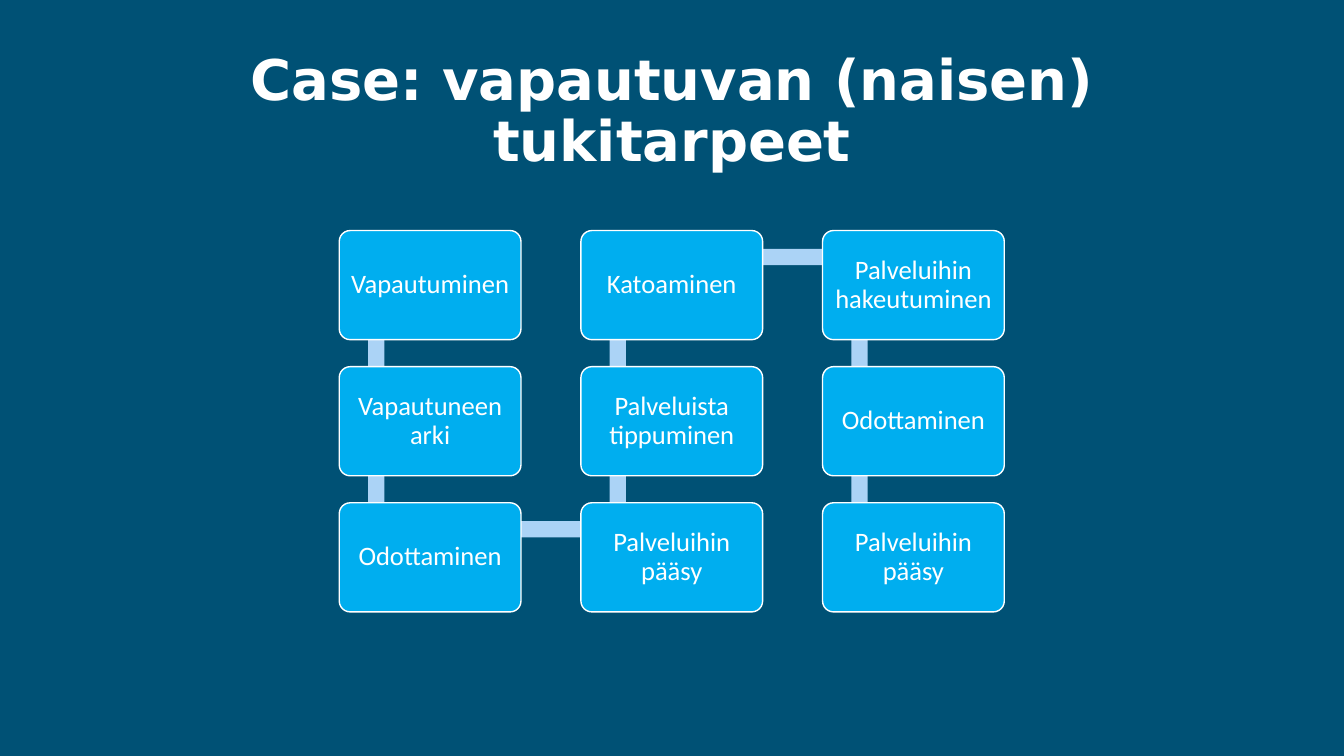
from dataclasses import dataclass
from math import atan2, degrees, hypot

from pptx import Presentation
from pptx.dml.color import RGBColor
from pptx.enum.shapes import MSO_SHAPE
from pptx.enum.text import MSO_ANCHOR, MSO_AUTO_SIZE, PP_ALIGN
from pptx.util import Cm, Pt

BAR = MSO_SHAPE.RECTANGLE
ROUNDED = MSO_SHAPE.ROUNDED_RECTANGLE
MIDDLE = MSO_ANCHOR.MIDDLE
NO_AUTOFIT = MSO_AUTO_SIZE.NONE
CENTER = PP_ALIGN.CENTER
TITLE_ONLY = 5


@dataclass(frozen=True)
class Theme:
    background: RGBColor = RGBColor.from_string("005175")
    step: RGBColor = RGBColor.from_string("00AEEF")
    link: RGBColor = RGBColor.from_string("ABD3F6")
    text: RGBColor = RGBColor.from_string("FFFFFF")
    title_font: str = "DejaVu Sans"
    step_font: str = "Calibri"
    title_size: Pt = Pt(40)
    step_size: Pt = Pt(19)
    outline: Pt = Pt(1)


@dataclass(frozen=True)
class Box:
    left: float
    top: float
    width: float
    height: float

    def lengths(self):
        return Cm(self.left), Cm(self.top), Cm(self.width), Cm(self.height)


THEME = Theme()
TITLE = "Case: vapautuvan (naisen) tukitarpeet"
STEPS = [
    "Vapautuminen", "Vapautuneen arki", "Odottaminen",
    "Palveluihin pääsy", "Palveluista tippuminen", "Katoaminen",
    "Palveluihin hakeutuminen", "Odottaminen", "Palveluihin pääsy",
]
ROWS = 3
STEP_WIDTH, STEP_HEIGHT = 4.58, 2.75
LINK_THICKNESS = 0.41
LINK_INSET_X, LINK_INSET_Y = 0.93, 0.67


def write(frame, text, font_name, size, bold=False):
    frame.text = text
    frame.word_wrap = True
    frame.auto_size = NO_AUTOFIT
    frame.vertical_anchor = MIDDLE
    paragraph = frame.paragraphs[0]
    paragraph.alignment = CENTER
    paragraph.line_spacing = 0.9
    font = paragraph.runs[0].font
    font.name, font.size, font.bold = font_name, size, bold
    font.color.rgb = THEME.text


def add_title(slide, box):
    title = slide.shapes.title
    title.left, title.top, title.width, title.height = box.lengths()
    write(title.text_frame, TITLE, THEME.title_font, THEME.title_size, True)


def add_link(shapes, start, end):
    dx, dy = end.left - start.left, end.top - start.top
    length = hypot(dx, dy)
    center_x = start.left + LINK_INSET_X + dx / 2
    center_y = start.top + LINK_INSET_Y + dy / 2
    place = Box(center_x - length / 2, center_y - LINK_THICKNESS / 2,
                length, LINK_THICKNESS)
    link = shapes.add_shape(BAR, *place.lengths())
    link.rotation = degrees(atan2(dy, dx)) % 360
    link.shadow.inherit = False
    link.fill.solid()
    link.fill.fore_color.rgb = THEME.link
    link.line.fill.background()


def add_step(shapes, text, box):
    step = shapes.add_shape(ROUNDED, *box.lengths())
    step.adjustments[0] = 0.1
    step.shadow.inherit = False
    step.fill.solid()
    step.fill.fore_color.rgb = THEME.step
    step.line.color.rgb = THEME.text
    step.line.width = THEME.outline
    frame = step.text_frame
    frame.margin_left = frame.margin_right = Cm(0.18)
    frame.margin_top = frame.margin_bottom = Cm(0.2)
    write(frame, text, THEME.step_font, THEME.step_size)


def step_box(index, area):
    column, position = divmod(index, ROWS)
    row = ROWS - 1 - position if column % 2 else position
    columns = len(STEPS) // ROWS
    pitch_x = (area.width - STEP_WIDTH) / (columns - 1)
    pitch_y = (area.height - STEP_HEIGHT) / (ROWS - 1)
    return Box(area.left + column * pitch_x, area.top + row * pitch_y,
               STEP_WIDTH, STEP_HEIGHT)


def add_path_of_steps(slide, area):
    shapes = slide.shapes.add_group_shape().shapes
    boxes = [step_box(index, area) for index in range(len(STEPS))]
    for index, (text, box) in enumerate(zip(STEPS, boxes)):
        if index + 1 < len(boxes):
            add_link(shapes, box, boxes[index + 1])
        add_step(shapes, text, box)


def main():
    presentation = Presentation()
    presentation.slide_width = Cm(33.87)
    presentation.slide_height = Cm(19.05)
    slide = presentation.slides.add_slide(presentation.slide_layouts[TITLE_ONLY])
    slide.background.fill.solid()
    slide.background.fill.fore_color.rgb = THEME.background
    add_title(slide, Box(2.33, 1.01, 29.21, 3.68))
    add_path_of_steps(slide, Box(8.55, 5.81, 16.76, 9.61))
    presentation.save("out.pptx")


if __name__ == "__main__":
    main()
